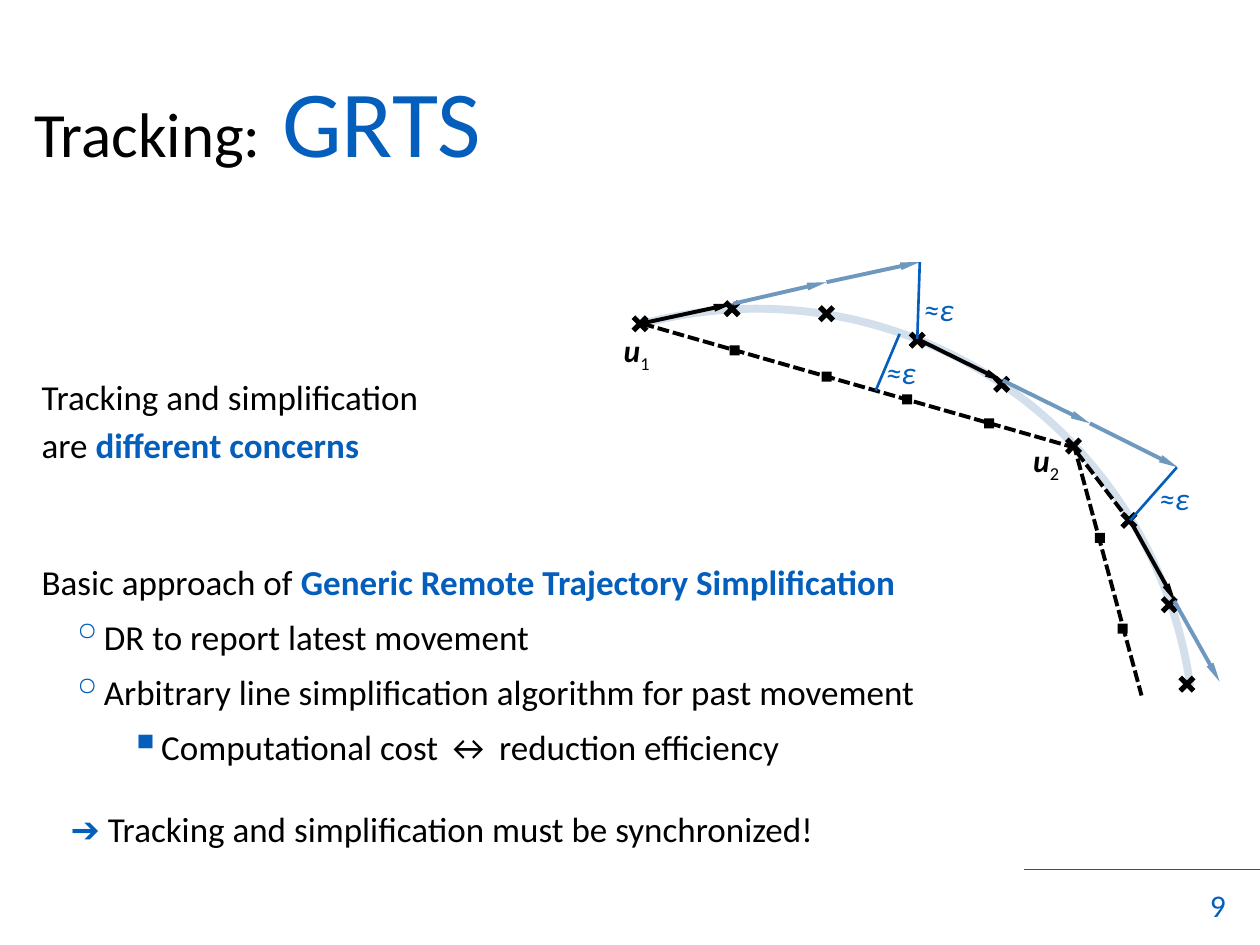
"""Build the slide on tracking with generic remote trajectory simplification."""
from dataclasses import dataclass

from lxml import etree
from pptx import Presentation, util as u
from pptx.dml.color import RGBColor
from pptx.enum import dml, shapes, text
from pptx.oxml.ns import qn


@dataclass(frozen=True)
class Theme:
    font: str = "Calibri"
    ink: str = "000000"
    accent: str = "045EBC"
    forecast: str = "6F98BF"
    track: str = "D3DFEB"
    title: int = 36
    headline: int = 54
    body: int = 20
    label: int = 18


theme = Theme()
deck = Presentation()
deck.slide_width, deck.slide_height = u.Inches(10), u.Inches(7.5)
cell = deck.slide_width / 100
page = deck.slides.add_slide(deck.slide_layouts[6])


def add_line(start, end, color, width, dashed=False, arrow=False):
    ends = [round(value * cell) for value in (*start, *end)]
    line = page.shapes.add_connector(shapes.MSO_CONNECTOR.STRAIGHT, *ends)
    line.line.color.rgb = RGBColor.from_string(color)
    line.line.width = u.Pt(width)
    if dashed:
        line.line.dash_style = dml.MSO_LINE.SQUARE_DOT
    if arrow:
        etree.SubElement(line.line._get_or_add_ln(), qn("a:tailEnd"), type="triangle", w="sm", len="lg")
    etree.SubElement(line._element.spPr, qn("a:effectLst"))


def add_text(area, paragraphs, wrap=False, anchor=text.MSO_ANCHOR.TOP):
    box = page.shapes.add_textbox(*[round(value * cell) for value in area])
    frame = box.text_frame
    frame.margin_left = frame.margin_right = frame.margin_top = frame.margin_bottom = 0
    frame.word_wrap, frame.vertical_anchor = wrap, anchor
    for index, runs in enumerate(paragraphs):
        para = frame.add_paragraph() if index else frame.paragraphs[0]
        for words, size, color, bold, italic in runs:
            for part, line in enumerate(words.split("\n")):
                if part:
                    para.add_line_break()
                span = para.add_run()
                span.text = line
                span.font.name, span.font.size = theme.font, u.Pt(size)
                span.font.color.rgb = RGBColor.from_string(color)
                span.font.bold, span.font.italic = bold, italic
    return frame


add_line((100, 69), (81.3, 69), theme.accent, 1)
number = add_text((89.1, 68.8, 8.2, 5), [[("9", theme.label, theme.accent, False, False)]],
                  anchor=text.MSO_ANCHOR.BOTTOM)
number.margin_top = number.margin_bottom = round(cell / 2)
number.paragraphs[0].alignment = text.PP_ALIGN.RIGHT

add_text((2.7, 5, 94.5, 11.2), [[("Tracking:", theme.title, theme.ink, False, False),
                                 (" GRTS", theme.headline, theme.accent, False, False)]], wrap=True)

outline = [
    (0, None, 4, [("Tracking and simplification\nare ", theme.ink, False),
                  ("different concerns", theme.accent, True)]),
    (0, None, 51, [("Basic approach of ", theme.ink, False),
                   ("Generic Remote Trajectory Simplification", theme.accent, True)]),
    (1, "◦", 4, [("DR to report latest movement", theme.ink, False)]),
    (1, "◦", 4, [("Arbitrary line simplification algorithm for past movement", theme.ink, False)]),
    (2, "▪", 4, [("Computational cost ↔ reduction efficiency", theme.ink, False)]),
    (1, None, 19.5, [("➔ ", theme.accent, False),
                     ("Tracking and simplification must be synchronized!", theme.ink, False)]),
]
body = add_text((0.9, 25.7, 72.8, 41.7),
                [[(words, theme.body, color, bold, False) for words, color, bold in runs]
                 for *_, runs in outline],
                wrap=True, anchor=text.MSO_ANCHOR.BOTTOM)
hang = 2.4 * cell
for para, (level, bullet, gap, _) in zip(body.paragraphs, outline):
    para.level = level
    para.line_spacing, para.space_before = 1.14, u.Pt(gap)
    props = para._p.get_or_add_pPr()
    props.set("marL", str(round(hang + level * 4.7 * cell)))
    props.set("indent", str(round(-hang) if level else 0))
    if bullet:
        tint = etree.SubElement(props, qn("a:buClr"))
        etree.SubElement(tint, qn("a:srgbClr"), val=theme.accent)
        etree.SubElement(props, qn("a:buSzPct"), val="120000")
        etree.SubElement(props, qn("a:buChar"), char=bullet)

arc = page.shapes.add_shape(shapes.MSO_SHAPE.ARC, *[round(value * cell) for value in (25.3, 24.5, 69.5, 69.5)])
arc.adjustments[0], arc.adjustments[1] = 162, 4.625
arc.rotation = 344.4
arc.shadow.inherit = False
arc.fill.background()
arc.line.color.rgb = RGBColor.from_string(theme.track)
arc.line.width = u.Pt(4.5)

reach = 0.53
positions = [(50.8, 25.7), (58.1, 24.5), (65.6, 24.9), (72.8, 27), (79.5, 30.5),
             (85.2, 35.4), (89.6, 41.3), (92.8, 48), (94.2, 54.3)]
for x, y in positions:
    for side in (reach, -reach):
        add_line((x - side, y + reach), (x + side, y - reach), theme.ink, 3)

reported = [((50.8, 25.7), (58.2, 24.1)), ((72.8, 26.9), (79.7, 30.3)), ((89.8, 41.5), (93.3, 47.8))]
predicted = [((93.2, 47.7), (96.8, 54.1)), ((79.6, 30.2), (86.5, 33.6)), ((86.5, 33.6), (93.5, 37.1)),
             ((58.2, 24.1), (65.6, 22.4)), ((65.6, 22.4), (73, 20.8))]
for color, arrows in ((theme.ink, reported), (theme.forecast, predicted)):
    for start, end in arrows:
        add_line(start, end, color, 2.25, arrow=True)

simplified = [((51, 25.7), (85.2, 35.5)), ((85.2, 35.2), (90.6, 55.2)), ((84.7, 34.9), (89.6, 41.3))]
for start, end in simplified:
    add_line(start, end, theme.ink, 2.25, dashed=True)

deviations = [((93.4, 37.1), (89.7, 41.3)), ((73, 20.8), (72.8, 26.9)), ((69.5, 31), (71.4, 26.5))]
for start, end in deviations:
    add_line(start, end, theme.accent, 1.5)

for x, y in [(78.1, 33.2), (57.9, 27.4), (65.2, 29.5), (71.6, 31.3), (86.9, 42.3), (88.7, 49.5)]:
    dot = page.shapes.add_shape(shapes.MSO_SHAPE.RECTANGLE,
                                *[round(value * cell) for value in (x, y, 0.8, 0.8)])
    dot.shadow.inherit = False
    dot.fill.solid()
    dot.fill.fore_color.rgb = RGBColor.from_string(theme.ink)
    dot.line.fill.background()

for x, y in [(73.3, 23), (92, 38), (70.3, 28)]:
    add_text((x, y, 2.5, 3), [[("≈ε", theme.label, theme.accent, False, True)]])

for x, y, index in [(49.5, 26.3, "1"), (82, 35, "2")]:
    vertex = add_text((x, y, 2.3, 3), [[("u", theme.label, theme.ink, True, True),
                                        (index, theme.label, theme.ink, False, False)]])
    vertex.paragraphs[0].runs[1].font._element.set("baseline", "-25000")

deck.save("out.pptx")
